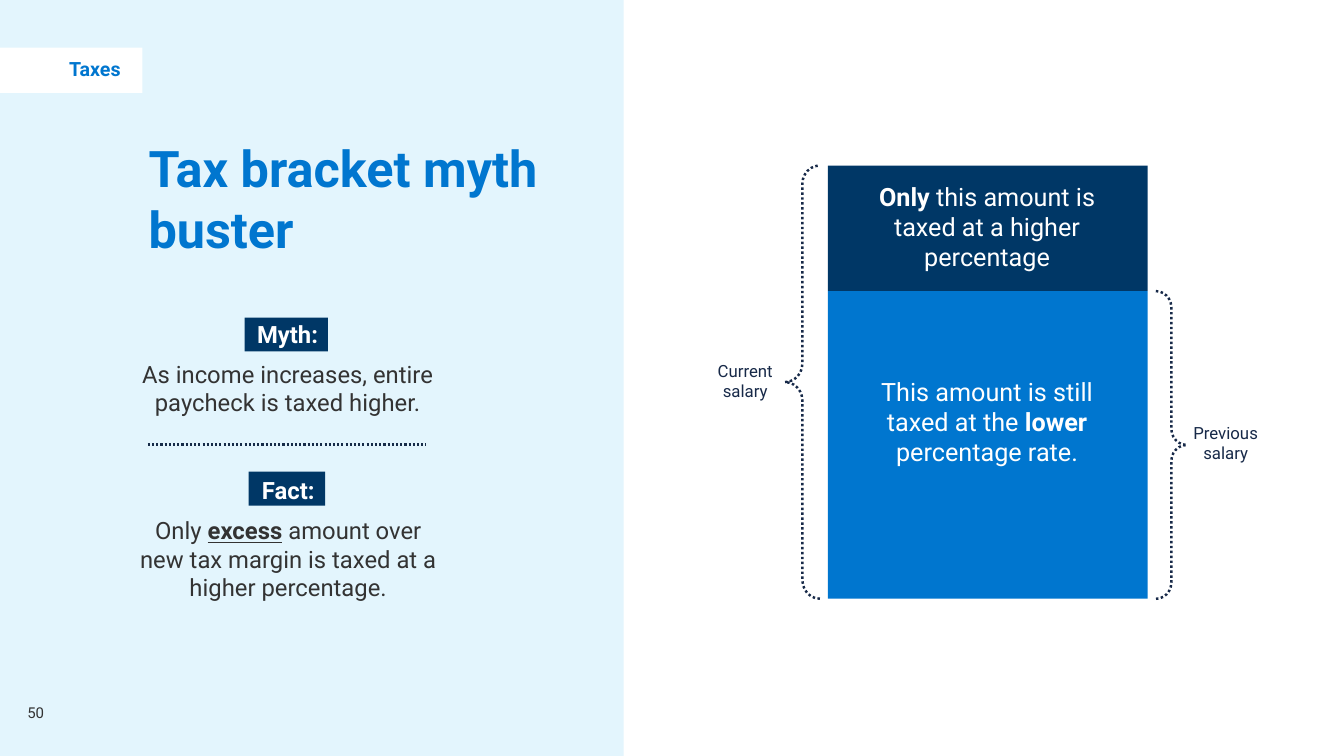
"""Build the tax bracket myth buster slide."""
from dataclasses import dataclass

from lxml.etree import SubElement
from pptx import Presentation
from pptx.dml.color import RGBColor
from pptx.enum.dml import MSO_LINE
from pptx.enum.shapes import MSO_CONNECTOR, MSO_SHAPE
from pptx.enum.text import MSO_ANCHOR, MSO_AUTO_SIZE, PP_ALIGN
from pptx.oxml.ns import qn
from pptx.util import Inches, Pt

WIDTH, HEIGHT = Inches(13.333), Inches(7.5)
BOLD = {"bold": True}
EXCESS = {"bold": True, "underline": True}


@dataclass(frozen=True)
class Theme:
    font: str = "Roboto"
    panel: str = "E3F5FD"
    white: str = "FFFFFF"
    blue: str = "0076CF"
    navy: str = "003766"
    ink: str = "172948"
    rule: str = "162B48"
    grey: str = "333333"
    title: float = 36
    bar: float = 18
    body: float = 17
    tag: float = 14
    label: float = 12
    page: float = 10.7


THEME = Theme()


def col(share):
    return round(WIDTH * share / 100)


def row(share):
    return round(HEIGHT * share / 100)


def grid(x, y, w, h):
    return col(x), row(y), col(w), row(h)


def set_attrs(target, values):
    for name, value in values.items():
        setattr(target, name, value)


def dot_line(line, color, width):
    line.color.rgb = RGBColor.from_string(color)
    set_attrs(line, {"width": Pt(width), "dash_style": MSO_LINE.ROUND_DOT})


def add_block(s, box, color):
    sp = s.shapes.add_shape(MSO_SHAPE.RECTANGLE, *grid(*box))
    sp.shadow.inherit = False
    sp.fill.solid()
    sp.fill.fore_color.rgb = RGBColor.from_string(color)
    sp.line.fill.background()


def add_brace(s, box, rotation=0):
    sp = s.shapes.add_shape(MSO_SHAPE.LEFT_BRACE, *grid(*box))
    sp.shadow.inherit = False
    sp.rotation = rotation
    sp.adjustments[0] = 0.525
    sp.fill.background()
    dot_line(sp.line, THEME.ink, 1.75)


def add_rule(s, x1, x2, y):
    line = s.shapes.add_connector(MSO_CONNECTOR.STRAIGHT, col(x1), row(y), col(x2), row(y))
    dot_line(line.line, THEME.rule, 1.5)
    SubElement(line._element.spPr, qn("a:effectLst"))


def write(tf, paragraphs, size, color, align=PP_ALIGN.CENTER, wrap=True):
    set_attrs(tf, {"word_wrap": wrap, "auto_size": MSO_AUTO_SIZE.NONE,
                   "vertical_anchor": MSO_ANCHOR.TOP})
    for i, runs in enumerate(paragraphs):
        p = tf.add_paragraph() if i else tf.paragraphs[0]
        p.alignment = align
        for text, style in runs:
            r = p.add_run()
            r.text = text
            set_attrs(r.font, {"name": THEME.font, "size": Pt(size), "bold": False, **style})
            r.font.color.rgb = RGBColor.from_string(color)


def add_text(s, box, *args, **kwargs):
    write(s.shapes.add_textbox(*grid(*box)).text_frame, *args, **kwargs)


def add_title(s, box, text):
    title = s.shapes.title
    set_attrs(title, dict(zip(("left", "top", "width", "height"), grid(*box))))
    write(title.text_frame, [[(text, BOLD)]], THEME.title, THEME.blue, PP_ALIGN.LEFT)
    title.element.getparent().append(title.element)


def add_salary_chart(s):
    x, w, top, split, bottom = 61.6, 23.8, 21.9, 38.5, 79.2
    add_block(s, (x, split, w, bottom - split), THEME.blue)
    add_block(s, (x, top, w, split - top), THEME.navy)
    add_text(s, (63.8, 23.3, 19.3, 13.5),
             [[("Only", BOLD), (" this amount is taxed at a higher percentage", {})]],
             THEME.bar, THEME.white)
    add_text(s, (63.8, 49.1, 19.3, 13.5),
             [[("This amount is still taxed at the ", {}), ("lower ", BOLD),
               ("percentage rate.", {})]], THEME.bar, THEME.white)
    add_brace(s, (58.4, top, 2.6, bottom - top))
    add_brace(s, (86, split, 2.3, bottom - split), 180)
    for box, word in (((52.3, 47.1, 6.3, 6.7), "Current"), ((87.4, 55.2, 7.6, 6.7), "Previous")):
        add_text(s, box, [[(word, {})], [("salary", {})]], THEME.label, THEME.ink)


def add_statement(s, tag, heading, heading_box, runs, body_box):
    add_block(s, tag, THEME.navy)
    add_text(s, heading_box, [[(heading, BOLD)]], THEME.body, THEME.white)
    add_text(s, body_box, [runs], THEME.body, THEME.grey)


def main():
    prs = Presentation()
    set_attrs(prs, {"slide_width": WIDTH, "slide_height": HEIGHT})
    s = prs.slides.add_slide(prs.slide_layouts[5])
    add_block(s, (0, 0, 46.4, 100), THEME.panel)
    add_title(s, (10.3, 17.5, 31.1, 10.5), "Tax bracket myth buster")
    add_salary_chart(s)
    add_block(s, (0, 6.3, 10.6, 6), THEME.white)
    add_text(s, (4.4, 6.9, 5.5, 4.5), [[("Taxes", BOLD)]], THEME.tag, THEME.blue,
             PP_ALIGN.LEFT, wrap=False)
    add_statement(s, (18.2, 42, 6.2, 4.5), "Myth:", (8.2, 41.6, 26.4, 6.3),
                  [("As income increases, entire paycheck is taxed higher.", {})],
                  (8.2, 46.9, 26.4, 10.5))
    add_rule(s, 11, 31.7, 58.8)
    add_statement(s, (18.5, 62.4, 5.7, 4.5), "Fact:", (9.6, 62.3, 23.7, 4.9),
                  [("Only ", {}), ("excess", EXCESS),
                   (" amount over new tax margin is taxed at a higher percentage.", {})],
                  (9.6, 67.6, 23.7, 20))
    add_text(s, (1.3, 92.4, 5.3, 7.6), [[("50", {})]], THEME.page, THEME.grey, PP_ALIGN.LEFT)
    prs.save("out.pptx")


if __name__ == "__main__":
    main()
